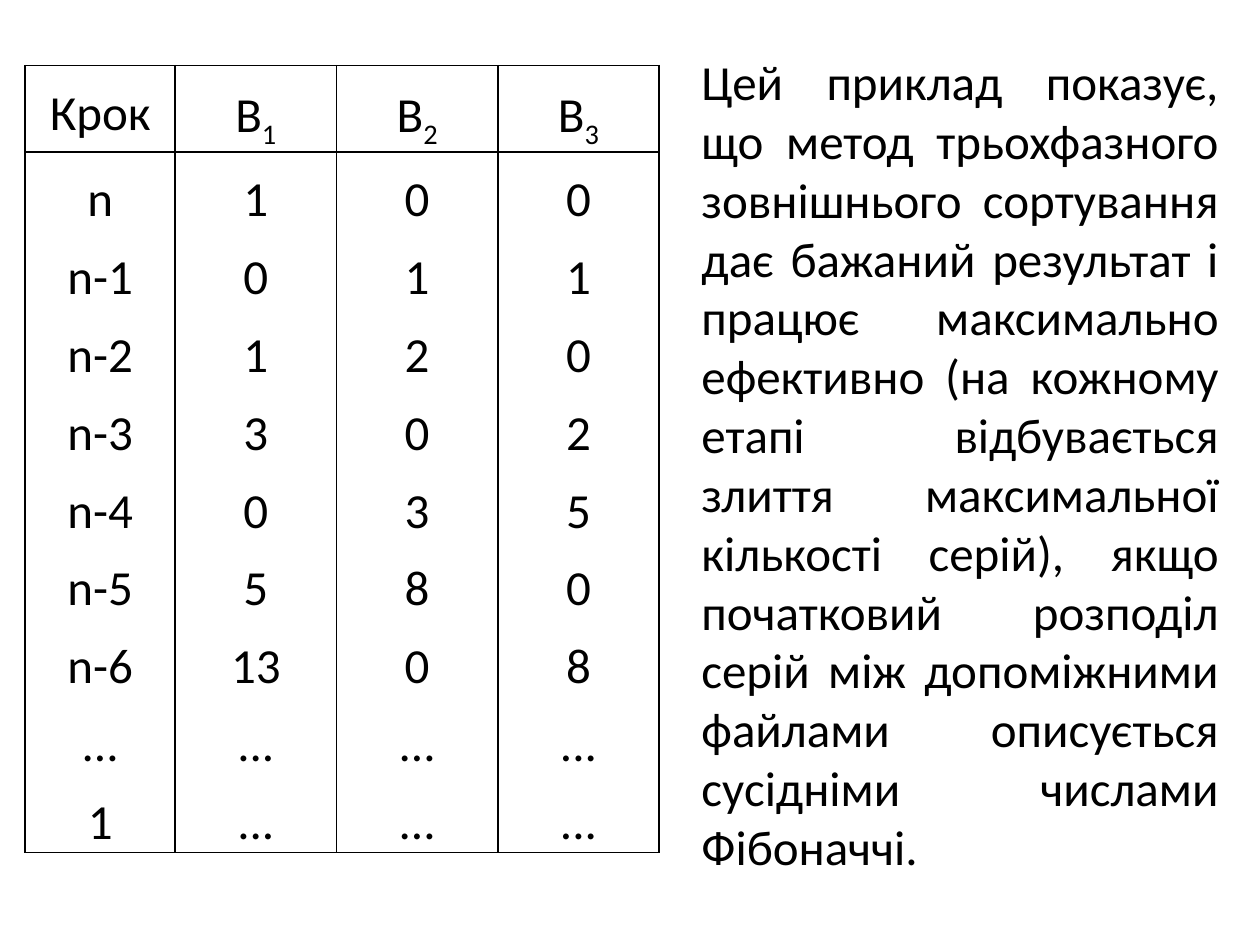
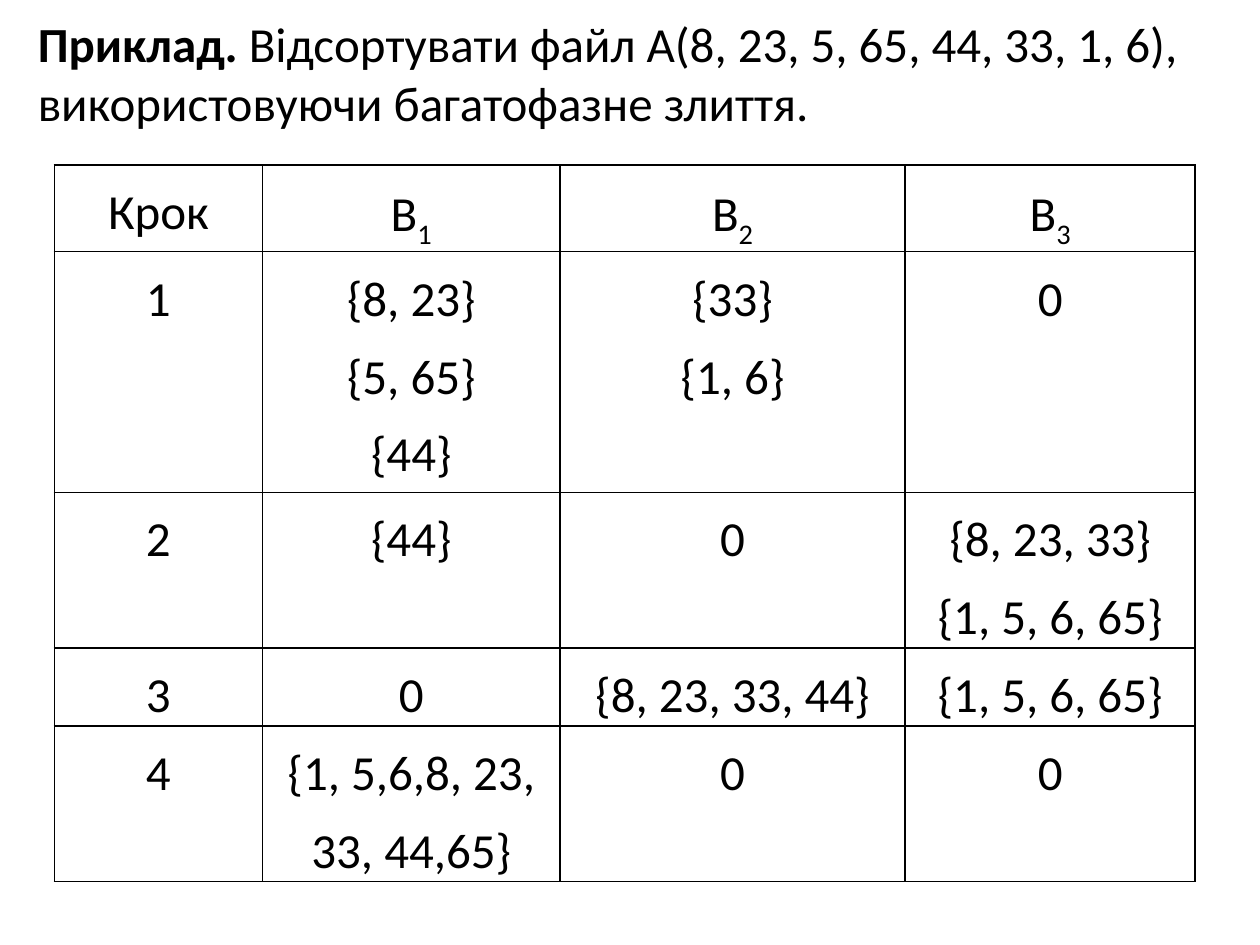
from dataclasses import dataclass

from lxml import etree
from pptx import Presentation
from pptx.dml.color import RGBColor
from pptx.enum.text import MSO_ANCHOR, MSO_AUTO_SIZE, PP_ALIGN
from pptx.oxml.ns import qn
from pptx.util import Pt

LEFT, CENTER, JUSTIFY = PP_ALIGN.LEFT, PP_ALIGN.CENTER, PP_ALIGN.JUSTIFY
TOP = MSO_ANCHOR.TOP
NO_FIT = MSO_AUTO_SIZE.NONE
GROW = MSO_AUTO_SIZE.SHAPE_TO_FIT_TEXT
TITLE_ONLY, BLANK = 5, 6

# Shared style
FONT = "Calibri"
FONT_SIZE = 28
INK = "000000"
BORDER_WIDTH = 1
CELL_INSET = 5.4
CELL_SPACING = 1.3
SUBSCRIPT = "-25000"


@dataclass(frozen=True)
class Frame:
    left: float
    top: float
    width: float
    height: float

    def lengths(self) -> list:
        return [Pt(n) for n in (self.left, self.top, self.width, self.height)]


@dataclass(frozen=True)
class Grid:
    """A step table; each body cell is a list of paragraphs."""
    frame: Frame
    columns: list[float]
    rows: list[float]
    body: list[list[list[str]]]


def color(value: str) -> RGBColor:
    return RGBColor.from_string(value)


def style_paragraph(para, align) -> None:
    para.alignment = align
    para.font.name = FONT
    para.font.size = Pt(FONT_SIZE)
    para.font.color.rgb = color(INK)


def add_span(para, text: str):
    span = para.add_run()
    span.text = text
    return span


def add_borders(cell) -> None:
    properties = cell._tc.get_or_add_tcPr()
    for index, side in enumerate(("lnL", "lnR", "lnT", "lnB")):
        line = etree.Element(qn(f"a:{side}"), w=str(Pt(BORDER_WIDTH)))
        fill = etree.SubElement(line, qn("a:solidFill"))
        etree.SubElement(fill, qn("a:srgbClr"), val=INK)
        properties.insert(index, line)


def fill_cell(cell, lines: list[str], subscript: str = "") -> None:
    cell.margin_left = cell.margin_right = Pt(CELL_INSET)
    cell.margin_top = cell.margin_bottom = Pt(0)
    cell.fill.background()
    add_borders(cell)
    text = cell.text_frame
    for index, line in enumerate(lines):
        para = text.add_paragraph() if index else text.paragraphs[0]
        style_paragraph(para, CENTER)
        para.font.bold = False
        para.line_spacing = CELL_SPACING
        add_span(para, line)
    if subscript:
        span = add_span(para, subscript)
        span._r.get_or_add_rPr().set("baseline", SUBSCRIPT)


def add_step_table(page, grid: Grid) -> None:
    shape = page.shapes.add_table(len(grid.rows), len(grid.columns), *grid.frame.lengths())
    table = shape.table
    table.first_row = table.horz_banding = False
    for column, width in zip(table.columns, grid.columns):
        column.width = Pt(width)
    for row, height in zip(table.rows, grid.rows):
        row.height = Pt(height)
    shape.height = Pt(grid.frame.height)

    # Header: the step, then the numbered files
    fill_cell(table.cell(0, 0), ["Крок"])
    for number in range(1, len(grid.columns)):
        fill_cell(table.cell(0, number), ["В"], str(number))
    for row_index, cells in enumerate(grid.body, start=1):
        for column_index, lines in enumerate(cells):
            fill_cell(table.cell(row_index, column_index), lines)


def add_note(page, frame: Frame, text: str) -> None:
    box = page.shapes.add_textbox(*frame.lengths())
    box.text_frame.word_wrap = True
    box.text_frame.auto_size = GROW
    para = box.text_frame.paragraphs[0]
    style_paragraph(para, JUSTIFY)
    add_span(para, text)


def set_title(page, frame: Frame, lead: str, rest: str) -> None:
    title = page.shapes.title
    title.left, title.top, title.width, title.height = frame.lengths()
    text = title.text_frame
    text.word_wrap = True
    text.auto_size = NO_FIT
    text.vertical_anchor = TOP
    para = text.paragraphs[0]
    style_paragraph(para, LEFT)
    add_span(para, lead).font.bold = True
    add_span(para, rest)


# Series counts per step, one column per file
SERIES_COUNTS = Grid(
    Frame(14.4, 37.5, 362.3, 437),
    [85.7] + [92.2] * 3,
    [31.7, 308.9],
    [[
        ["n"] + [f"n-{step}" for step in range(1, 7)] + ["...", "1"],
        ["1", "0", "1", "3", "0", "5", "13", "...", "..."],
        ["0", "1", "2", "0", "3", "8", "0", "...", "..."],
        ["0", "1", "0", "2", "5", "0", "8", "...", "..."],
    ]],
)

# Contents of the files during the merge
MERGE_STEPS = Grid(
    Frame(31, 94.4, 652, 399.6),
    [119, 170, 197.2, 165.8],
    [30.2, 137.5, 38.9, 23, 59],
    [
        [["1"], ["{8, 23}", "{5, 65}", "{44}"], ["{33}", "{1, 6}"], ["0"]],
        [["2"], ["{44}"], ["0"], ["{8, 23, 33}", "{1, 5, 6, 65}"]],
        [["3"], ["0"], ["{8, 23, 33, 44}"], ["{1, 5, 6, 65}"]],
        [["4"], ["{1, 5,6,8, 23, 33, 44,65}"], ["0"], ["0"]],
    ],
)

CONCLUSION = (
    "Цей приклад показує, що метод трьохфазного зовнішнього сортування дає бажаний "
    "результат і працює максимально ефективно (на кожному етапі відбувається злиття "
    "максимальної кількості серій), якщо початковий розподіл серій між допоміжними "
    "файлами описується сусідніми числами Фібоначчі."
)
TASK = " Відсортувати файл А(8, 23, 5, 65, 44, 33, 1, 6), використовуючи багатофазне злиття."


def main() -> None:
    deck = Presentation()
    deck.slide_width, deck.slide_height = Pt(720), Pt(540)

    # Slide 1: series counts and conclusion
    page = deck.slides.add_slide(deck.slide_layouts[BLANK])
    add_step_table(page, SERIES_COUNTS)
    add_note(page, Frame(393.8, 26, 309.6, 482.4), CONCLUSION)

    # Slide 2: worked example
    page = deck.slides.add_slide(deck.slide_layouts[TITLE_ONLY])
    set_title(page, Frame(14.4, 4.3, 692, 75), "Приклад.", TASK)
    add_step_table(page, MERGE_STEPS)

    deck.save("out.pptx")


if __name__ == "__main__":
    main()
